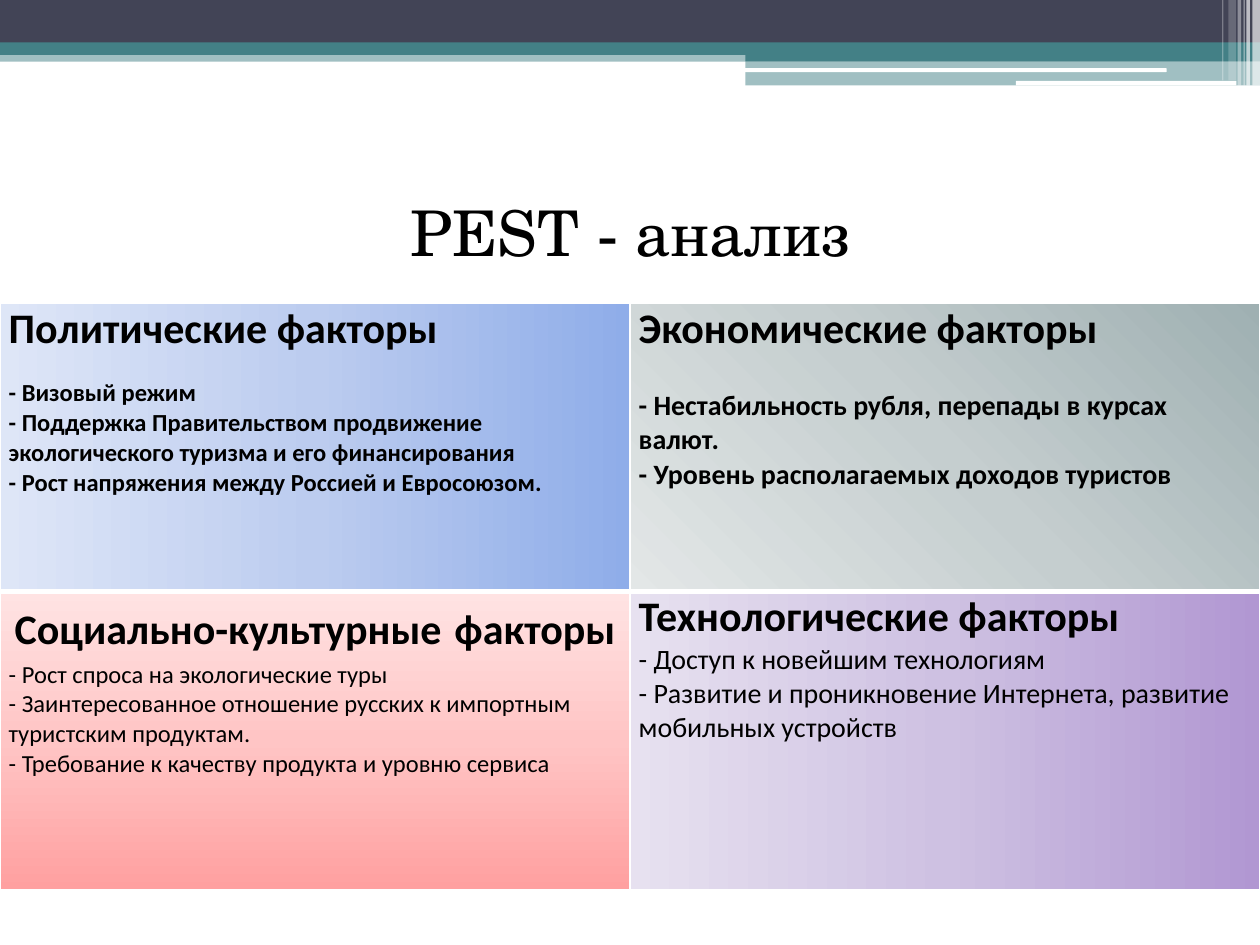
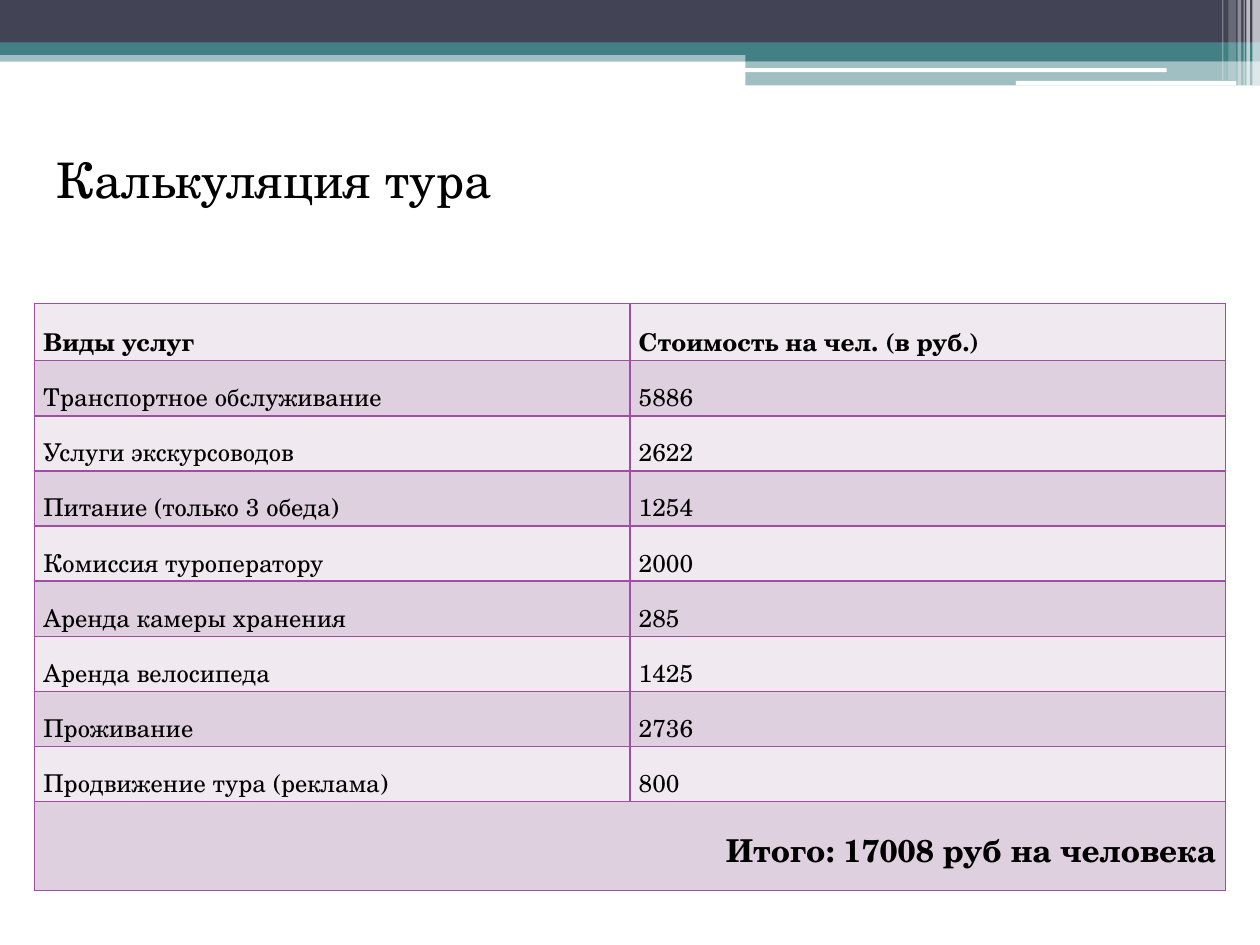
from lxml import etree
from pptx import Presentation
from pptx.dml.color import RGBColor
from pptx.enum.shapes import MSO_SHAPE
from pptx.enum.text import MSO_ANCHOR, PP_ALIGN
from pptx.oxml.ns import qn
from pptx.util import Pt

RECT, ROUND = MSO_SHAPE.RECTANGLE, MSO_SHAPE.ROUNDED_RECTANGLE
LEFT, CENTER, RIGHT = PP_ALIGN.LEFT, PP_ALIGN.CENTER, PP_ALIGN.RIGHT
MIDDLE = MSO_ANCHOR.MIDDLE

SANS, SERIF = "Calibri", "TeX Gyre Schola"
WIDE, HIGH = 720, 540
TOP, TALL = 173.5, 334.8  # both tables
INSET = 5

COLORS = {
    "navy": "424456", "teal": "438086", "white": "FFFFFF", "black": "000000",
    "plum": "A04DA3", "pale": "F0E9F0", "lilac": "DFD0E0",
}

# left, top, width, height, colour, opacity in percent, shape
BANDS = [
    (0, 28.8, 720, 6.5, "teal", 50, RECT),
    (0, 0, 720, 24.5, "navy", 100, RECT),
    (0, 24.2, 720, 7.2, "teal", 100, RECT),
    (426, 28, 294, 7, "teal", 100, RECT),
    (426, 34.8, 294, 14, "teal", 50, RECT),
    (425.5, 39, 241.2, 2.2, "white", 100, ROUND),
    (580.5, 46.2, 126, 2.6, "white", 100, ROUND),
    (715.6, 0, 4.4, 48.9, "white", 65, RECT),
    (712.2, 0, 2, 48.9, "white", 65, RECT),
    (710.6, 0, 0.7, 48.9, "white", 60, RECT),
    (707.2, 0, 2, 48.9, "white", 40, RECT),
    (702, 0, 4.3, 46, "white", 20, RECT),
    (698.4, 0, 0.7, 46, "white", 30, RECT),
]

# An angle of None is a glow from the top right corner.
FACTORS = [
    dict(head=[("Политические факторы", 24)], size=14, bold=True, gap=13.4,
         stops=("8FADE9", "BCCCEF", "DEE6F7"), angle=180,
         items=["- Визовый режим",
                "- Поддержка Правительством продвижение экологического туризма и его финансирования",
                "- Рост напряжения между Россией и Евросоюзом."]),
    dict(head=[("Экономические факторы", 24)], size=16, bold=True, gap=19.5,
         stops=("9FB0B2", "C5CECF", "E3E7E7"), angle=None,
         items=["- Нестабильность рубля, перепады в курсах валют.",
                "- Уровень располагаемых доходов туристов"]),
    dict(head=[("Социально-культурные", 24), (" ", 32), ("факторы", 24)],
         align=CENTER, size=14, bold=False, gap=0,
         stops=("FFA0A0", "FFC5C5", "FFE3E3"), angle=270,
         items=["- Рост спроса на экологические туры",
                "- Заинтересованное отношение русских к импортным туристским продуктам.",
                "- Требование к качеству продукта и уровню сервиса"]),
    dict(head=[("Технологические факторы", 24)], size=16, bold=False, gap=0,
         stops=("B197D2", "CEC1E2", "E7E1F0"), angle=180,
         items=["- Доступ к новейшим технологиям",
                "- Развитие и проникновение Интернета, развитие мобильных устройств"]),
]

COSTS = [
    ("Виды услуг", "Стоимость на чел. (в руб.)"),
    ("Транспортное обслуживание", "5886"),
    ("Услуги экскурсоводов", "2622"),
    ("Питание (только 3 обеда)", "1254"),
    ("Комиссия туроператору", "2000"),
    ("Аренда камеры хранения", "285"),
    ("Аренда велосипеда", "1425"),
    ("Проживание", "2736"),
    ("Продвижение тура (реклама)", "800"),
]
TOTAL = "Итого: 17008 руб на человека"


def rgb(name):
    return RGBColor.from_string(COLORS[name])


def node(parent, tag, **attrs):
    """Append a DrawingML child and return it."""
    return etree.SubElement(parent, qn("a:" + tag), {k: str(v) for k, v in attrs.items()})


def write(para, text, size=14, font=SANS, bold=False, align=LEFT, before=0, lines=None):
    """Add one run to a paragraph and format both."""
    para.alignment, para.space_before = align, Pt(before)
    if lines:
        para.line_spacing = lines
    run = para.add_run()
    run.text = text
    run.font.name, run.font.size, run.font.bold = font, Pt(size), bold
    run.font.color.rgb = rgb("black")


def add_bands(slide, layout):
    """Draw the bands and hand them over to the shared layout."""
    for x, y, w, h, color, alpha, kind in BANDS:
        band = slide.shapes.add_shape(kind, Pt(x), Pt(y), Pt(w), Pt(h))
        band.shadow.inherit = False
        band.fill.solid()
        band.fill.fore_color.rgb = rgb(color)
        band.line.fill.background()
        if alpha < 100:
            tint = next(band.element.iter(qn("a:srgbClr")))
            node(tint, "alpha", val=alpha * 1000)
        layout.shapes.element.append(band.element)


def set_title(slide, text, x, y, size, align):
    title = slide.shapes.title
    title.left, title.top, title.width, title.height = Pt(x), Pt(y), Pt(648), Pt(84)
    title.text_frame.vertical_anchor = MIDDLE
    write(title.text_frame.paragraphs[0], text, size=size, font=SERIF, align=align)


def add_table(slide, x, heights, width):
    """Add a plain table of two equal columns."""
    frame = slide.shapes.add_table(len(heights), 2, Pt(x), Pt(TOP), Pt(width), Pt(TALL))
    table = frame.table
    table.first_row = table.horz_banding = False
    for col in table.columns:
        col.width = Pt(width / 2)
    for row, high in zip(table.rows, heights):
        row.height = Pt(high)
    for cell in table.iter_cells():
        cell.margin_left = cell.margin_right = Pt(INSET)
        cell.margin_top = cell.margin_bottom = 0
    return table


def set_edges(cell, color, **widths):
    """Draw 1 pt edges; widths such as B=3 override a side."""
    props = cell._tc.get_or_add_tcPr()
    for side in "LRTB":
        edge = node(props, "ln" + side, w=Pt(widths.get(side, 1)))
        node(node(edge, "solidFill"), "srgbClr", val=COLORS[color])


def set_blend(cell, stops, angle):
    blend = node(cell._tc.get_or_add_tcPr(), "gradFill", rotWithShape=1)
    marks = node(blend, "gsLst")
    for i, color in enumerate(stops):
        node(node(marks, "gs", pos=i * 50000), "srgbClr", val=color)
    if angle is None:
        node(node(blend, "path", path="circle"), "fillToRect", l=100000, b=100000)
    else:
        node(blend, "lin", ang=angle * 60000, scaled=0)


def fill_factors(slide):
    table = add_table(slide, 0, (164.4, 170.4), WIDE)
    for i, part in enumerate(FACTORS):
        row, col = divmod(i, 2)
        cell = table.cell(row, col)
        set_edges(cell, "white", **{"TB"[row == 0]: 3})
        set_blend(cell, part["stops"], part["angle"])
        frame = cell.text_frame
        for text, size in part["head"]:
            write(frame.paragraphs[0], text, size=size, bold=True,
                  align=part.get("align", LEFT))
        for j, text in enumerate(part["items"]):
            write(frame.add_paragraph(), text, size=part["size"], bold=part["bold"],
                  before=0 if j else part["gap"])


def fill_costs(slide):
    heights = [32] + [31.5] * (len(COSTS) - 1) + [50.8]
    table = add_table(slide, 19.8, heights, 680.4)
    last = len(COSTS)
    for row in range(last + 1):
        for col in range(2):
            cell = table.cell(row, col)
            set_edges(cell, "plum")
            cell.fill.solid()
            cell.fill.fore_color.rgb = rgb("lilac" if row % 2 else "pale")
            if row < last:
                write(cell.text_frame.paragraphs[0], COSTS[row][col], font=SERIF,
                      bold=row == 0, lines=1.5)
    table.cell(last, 0).merge(table.cell(last, 1))
    write(table.cell(last, 0).text_frame.paragraphs[0], TOTAL, size=18, font=SERIF,
          bold=True, align=RIGHT, lines=1.5)


def main():
    deck = Presentation()
    deck.slide_width, deck.slide_height = Pt(WIDE), Pt(HIGH)
    layout = deck.slide_layouts[5]
    pest, tour = [deck.slides.add_slide(layout) for _ in range(2)]
    add_bands(pest, layout)

    set_title(pest, "PEST - анализ", 36, 90, 36, CENTER)
    fill_factors(pest)

    set_title(tour, "Калькуляция тура", 25.2, 60.5, 28, LEFT)
    fill_costs(tour)
    deck.save("out.pptx")


if __name__ == "__main__":
    main()
